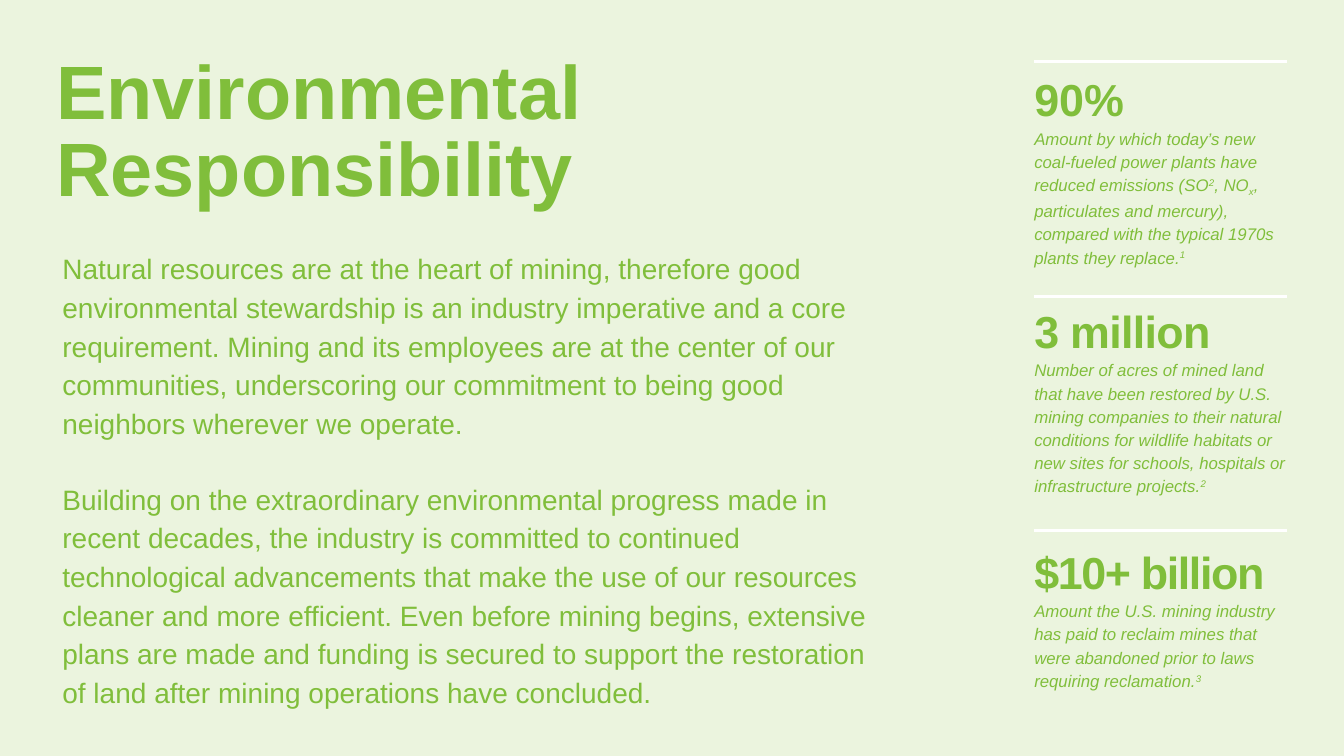
from lxml import etree
from pptx import Presentation
from pptx import util as u
from pptx.dml import color
from pptx.enum import shapes, text
from pptx.oxml import ns

EMU_PER_PX = 9144  # 100 px to the inch
GREEN, PALE, WHITE = "80BE3B", "EBF4DE", "FFFFFF"
TITLE = {"size": u.Pt(54), "bold": True}
BODY = {"size": u.Pt(20)}
FIGURE = {"size": u.Pt(32), "bold": True}
CAPTION = {"size": u.Pt(12), "italic": True}
LOOSE = {"line_spacing": 1.15}
SUPER, SUB = 30, -25

INTRO = (
    "Natural resources are at the heart of mining, therefore good environmental "
    "stewardship is an industry imperative and a core requirement. Mining and its "
    "employees are at the center of our communities, underscoring our commitment to "
    "being good neighbors wherever we operate."
)
PROGRESS = (
    "Building on the extraordinary environmental progress made in recent decades, the "
    "industry is committed to continued technological advancements that make the use of "
    "our resources cleaner and more efficient. Even before mining begins, extensive "
    "plans are made and funding is secured to support the restoration of land after "
    "mining operations have concluded."
)
# Rule top, text box (top, width, height), figure, letter spacing, caption spans
FACTS = [
    (61, (66, 260, 197), "90%", 0, [
        ("Amount by which today’s new coal-fueled power plants have reduced emissions (SO", 0),
        ("2", SUPER), (", NO", 0), ("x", SUB),
        (", particulates and mercury), compared with the typical 1970s plants they replace.", 0),
        ("1", SUPER)]),
    (294, (296, 275, 197), "3 million", -50, [
        ("Number of acres of mined land that have been restored by U.S. mining companies to "
         "their natural conditions for wildlife habitats or new sites for schools, hospitals "
         "or infrastructure projects.", 0),
        ("2", SUPER)]),
    (526, (535, 266, 152), "$10+ billion", -100, [
        ("Amount the U.S. mining industry has paid to reclaim mines that were abandoned prior "
         "to laws requiring reclamation.", 0),
        ("3", SUPER)]),
]


def px(*lengths):
    return [u.Emu(length * EMU_PER_PX) for length in lengths]


def rgb(value):
    return color.RGBColor.from_string(value)


def apply(target, values):
    for name, value in values.items():
        setattr(target, name, value)


class SlideBuilder:
    def __init__(self, deck, font, ink):
        self.page = deck.slides.add_slide(deck.slide_layouts[6])
        self.font, self.ink = font, ink

    def panel(self, left, top, width, height, fill):
        shape = self.page.shapes.add_shape(
            shapes.MSO_SHAPE.RECTANGLE, *px(left, top, width, height))
        shape.shadow.inherit = False
        shape.fill.solid()
        shape.fill.fore_color.rgb = rgb(fill)
        shape.line.fill.background()

    def rule(self, left, top, width, stroke):
        line = self.page.shapes.add_connector(
            shapes.MSO_CONNECTOR.STRAIGHT, *px(left, top, left + width, top))
        line.line.color.rgb = rgb(stroke)
        line.line.width = u.Pt(2.25)
        etree.SubElement(line._element.spPr, ns.qn("a:effectLst"))

    def text(self, left, top, width, height, paragraphs):
        """Each paragraph is (spans, font values, paragraph values, letter spacing)."""
        box = self.page.shapes.add_textbox(*px(left, top, width, height))
        frame = box.text_frame
        apply(frame, {"word_wrap": True, "auto_size": text.MSO_AUTO_SIZE.SHAPE_TO_FIT_TEXT})
        for index, (spans, font, layout, spacing) in enumerate(paragraphs):
            para = frame.add_paragraph() if index else frame.paragraphs[0]
            apply(para, layout)
            for words, baseline in spans:
                self.span(para, words, font, {"baseline": baseline * 1000, "spc": spacing})

    def span(self, para, words, font, extras):
        span = para.add_run()
        span.text = words
        apply(span.font, {"name": self.font, **font})
        span.font.color.rgb = rgb(self.ink)
        for name, value in extras.items():
            if value:
                span.font._element.set(name, str(value))


def main():
    deck = Presentation()
    deck.slide_width, deck.slide_height = px(1333, 750)
    slide = SlideBuilder(deck, "Arial", GREEN)
    slide.panel(0, 0, 1333, 750, PALE)
    slide.text(46, 52, 829, 159, [
        ([("Environmental Responsibility", 0)], TITLE, {"line_spacing": 0.85}, 0)])
    slide.text(52, 240, 838, 454, [
        ([(INTRO, 0)], BODY, LOOSE, 0),
        ([(PROGRESS, 0)], BODY, {**LOOSE, "space_before": u.Pt(26.4)}, 0)])
    for rule_top, (top, width, height), figure, spacing, caption in FACTS:
        slide.rule(1026, rule_top, 250, WHITE)
        slide.text(1016, top, width, height, [
            ([(figure, 0)], FIGURE, {}, spacing),
            (caption, CAPTION, LOOSE, 0)])
    deck.save("out.pptx")


if __name__ == "__main__":
    main()
